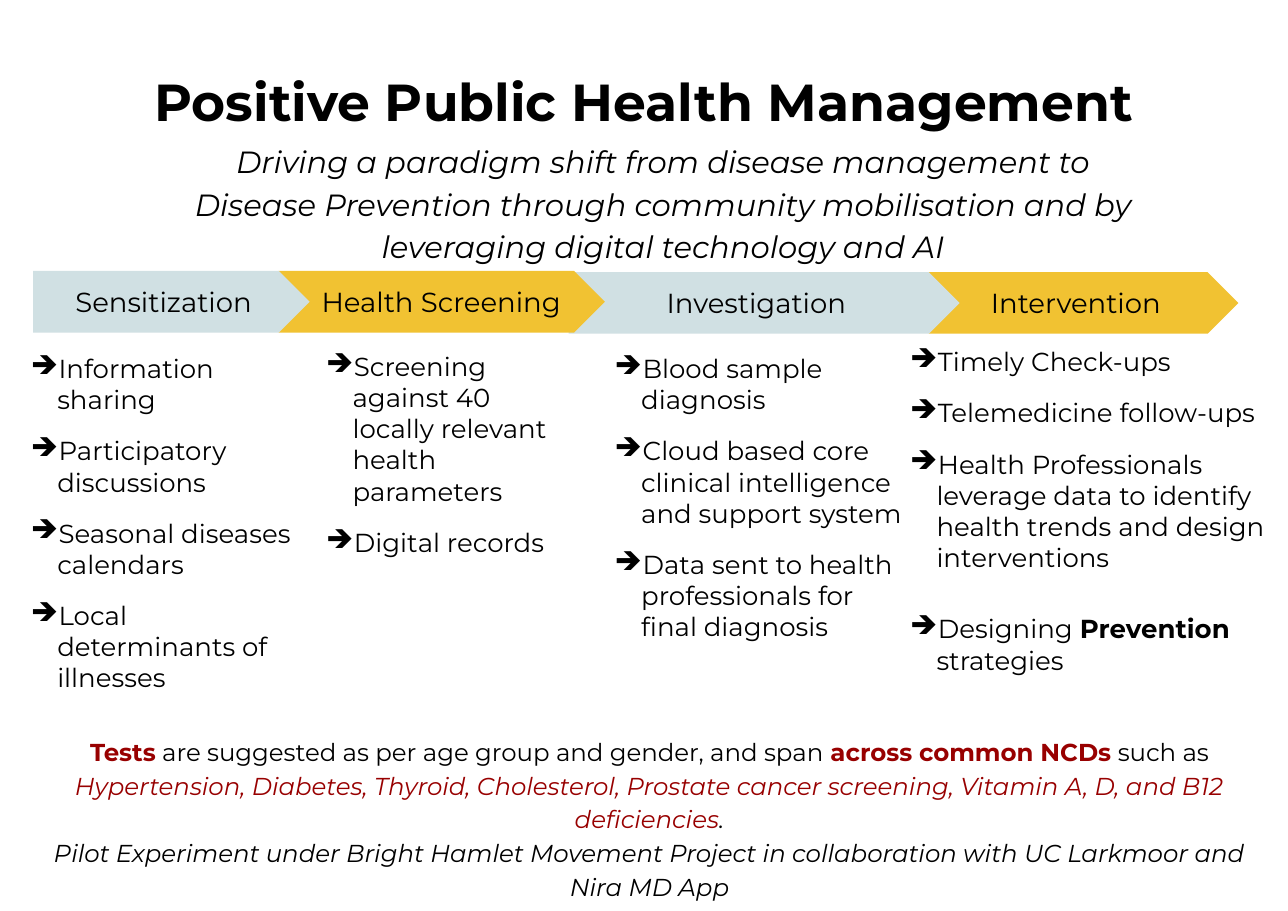
from lxml import etree
from pptx import Presentation
from pptx import util as u
from pptx.dml.color import RGBColor
from pptx.enum import shapes, text
from pptx.oxml import ns

COLOURS = {"black": "000000", "red": "980000", "gold": "F1C232", "mist": "D0E0E3"}
FONT = "Montserrat"
INSET = 0.13

STAGES = [
    ("Sensitization", "mist", (0.3, 2.46, 2.51), INSET),
    ("Health Screening", "gold", (2.53, 2.46, 2.96), 2 * INSET),
    ("Investigation", "mist", (5.16, 2.47, 3.55), INSET),
    ("Intervention", "gold", (8.43, 2.47, 2.81), INSET),
]

ACTIVITIES = [
    ((0.14, 3.07, 2.67, 3.67), [
        "Information sharing",
        "Participatory discussions",
        "Seasonal diseases calendars",
        "Local determinants of illnesses",
    ]),
    ((2.82, 3.05, 2.43, 2.99), [
        "Screening against 40 locally relevant health parameters",
        "Digital records",
    ]),
    ((5.44, 3.07, 2.9, 2.91), [
        "Blood sample diagnosis",
        "Cloud based core clinical intelligence and support system",
        "Data sent to health professionals for final diagnosis",
    ]),
    ((8.12, 3.01, 3.55, 3.46), [
        "Timely Check-ups",
        "Telemedicine follow-ups",
        "Health Professionals leverage data to identify health trends and design interventions",
        [("Designing ", {}), ("Prevention ", {"bold": True}), ("strategies", {})],
    ]),
]

KEY = {"bold": True, "colour": "red"}
FOOTER = [
    [
        ("Tests", KEY),
        (" are suggested as per age group and gender, and span ", {}),
        ("across common NCDs", KEY),
        (" such as ", {}),
        ("Hypertension, Diabetes, Thyroid, Cholesterol, Prostate cancer screening, "
         "Vitamin A, D, and B12 deficiencies", {"italic": True, "colour": "red"}),
        (".", {"italic": True}),
    ],
    [("Pilot Experiment under Bright Hamlet Movement Project in collaboration with "
      "UC Larkmoor and Nira MD App", {"italic": True})],
]


class SlideBuilder:
    """Holds the slide and its text style, and adds each kind of element."""

    def __init__(self, slide):
        self.slide = slide

    def style(self, run, size, bold=False, italic=False, colour="black"):
        run.font.name = FONT
        run.font.size = u.Pt(size)
        run.font.bold = bold
        run.font.italic = italic
        run.font.color.rgb = RGBColor.from_string(COLOURS[colour])

    def insets(self, frame, inset, left=None):
        frame.word_wrap = True
        frame.margin_left = u.Inches(left or inset)
        frame.margin_top = frame.margin_right = frame.margin_bottom = u.Inches(inset)

    def text_box(self, box, paragraphs, size, inset=INSET, spacing=None, centred=True):
        shape = self.slide.shapes.add_textbox(*map(u.Inches, box))
        frame = shape.text_frame
        self.insets(frame, inset)
        frame.auto_size = text.MSO_AUTO_SIZE.SHAPE_TO_FIT_TEXT
        for index, pieces in enumerate(paragraphs):
            paragraph = frame.add_paragraph() if index else frame.paragraphs[0]
            paragraph.alignment = text.PP_ALIGN.CENTER if centred else text.PP_ALIGN.LEFT
            if spacing:
                paragraph.line_spacing = spacing
            if isinstance(pieces, str):
                pieces = [(pieces, {})]
            for words, look in pieces:
                run = paragraph.add_run()
                run.text = words
                self.style(run, size, **look)
        return frame

    def bullet_list(self, box, items):
        frame = self.text_box(box, items, 17, centred=False)
        for index, paragraph in enumerate(frame.paragraphs):
            if index:
                mixed = not isinstance(items[index], str)
                paragraph.space_before = u.Pt(26 if mixed else 13)
            properties = paragraph._p.get_or_add_pPr()
            properties.set("marL", str(u.Inches(0.25)))
            properties.set("indent", str(u.Inches(-0.24)))
            colour = etree.SubElement(properties, ns.qn("a:buClr"))
            etree.SubElement(colour, ns.qn("a:srgbClr"), val=COLOURS["black"])
            etree.SubElement(properties, ns.qn("a:buChar"), char="➔")

    def stage(self, label, colour, place, left_inset):
        shape = self.slide.shapes.add_shape(
            shapes.MSO_SHAPE.PENTAGON, *map(u.Inches, (*place, 0.56)))
        shape.adjustments[0] = 0.5
        shape.shadow.inherit = False
        shape.fill.solid()
        shape.fill.fore_color.rgb = RGBColor.from_string(COLOURS[colour])
        shape.line.fill.background()
        frame = shape.text_frame
        self.insets(frame, INSET, left_inset)
        frame.vertical_anchor = text.MSO_ANCHOR.MIDDLE
        frame.text = label
        paragraph = frame.paragraphs[0]
        paragraph.alignment = text.PP_ALIGN.CENTER
        self.style(paragraph.runs[0], 18)


def main():
    presentation = Presentation()
    presentation.slide_width = u.Inches(11.69)
    presentation.slide_height = u.Inches(8.27)
    builder = SlideBuilder(presentation.slides.add_slide(presentation.slide_layouts[6]))

    subtitle = ("Driving a paradigm shift from disease management to Disease Prevention "
                "through community mobilisation and by leveraging digital technology and AI")
    builder.text_box((1.58, 1.15, 8.88, 1.31), [[(subtitle, {"italic": True})]], 20, 0.1, 1.15)
    title = [("Positive Public Health Management", {"bold": True})]
    builder.text_box((0.88, 0.41, 9.93, 0.67), [title], 34, 0.05, 1.3)

    for stage in reversed(STAGES):
        builder.stage(*stage)
    for box, items in ACTIVITIES:
        builder.bullet_list(box, items)
    builder.text_box((0.3, 6.52, 11.19, 1.76), FOOTER, 16, spacing=1.15)

    presentation.save("out.pptx")


if __name__ == "__main__":
    main()
